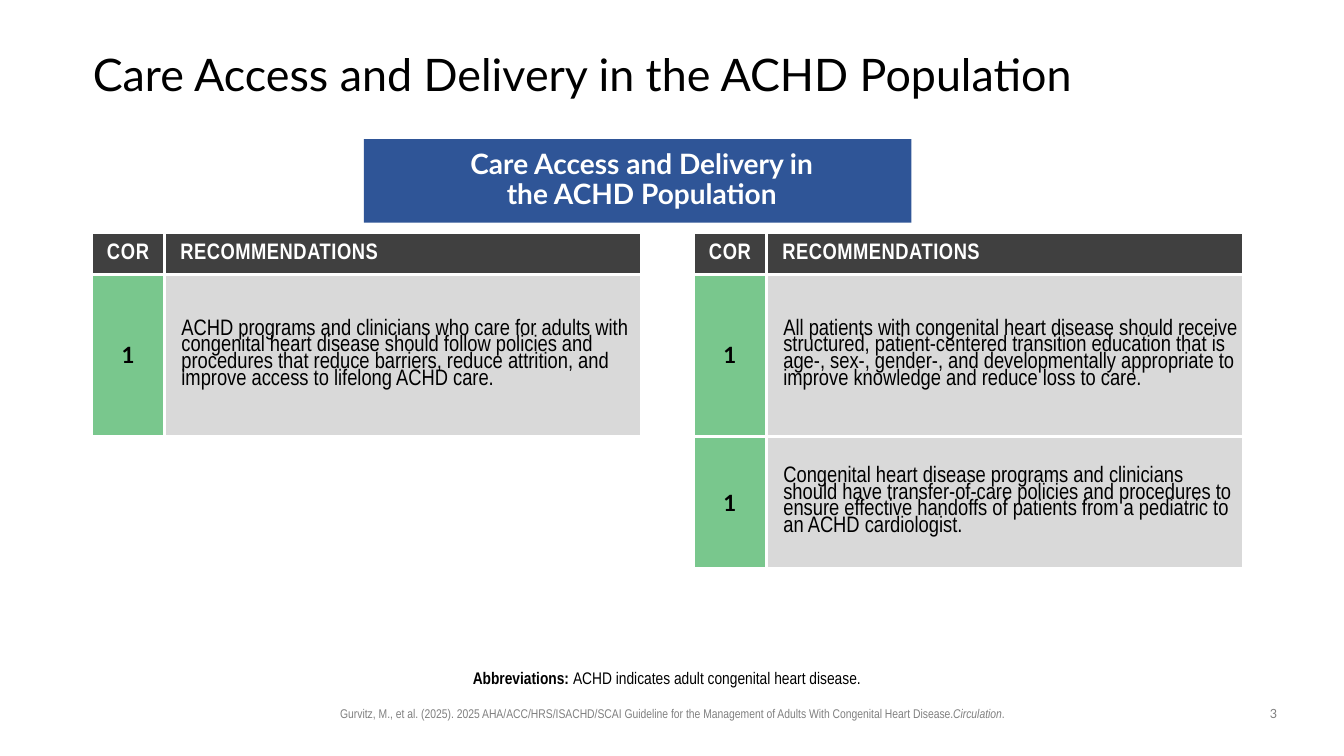
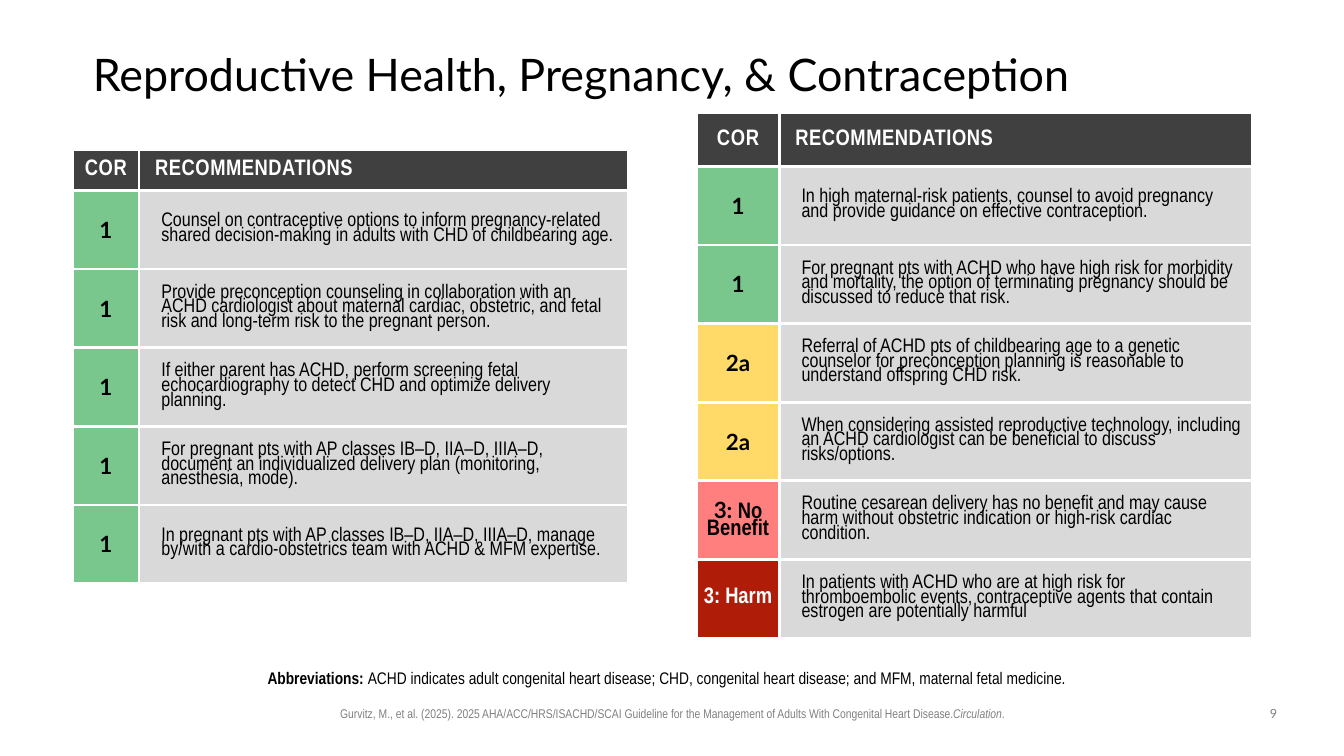
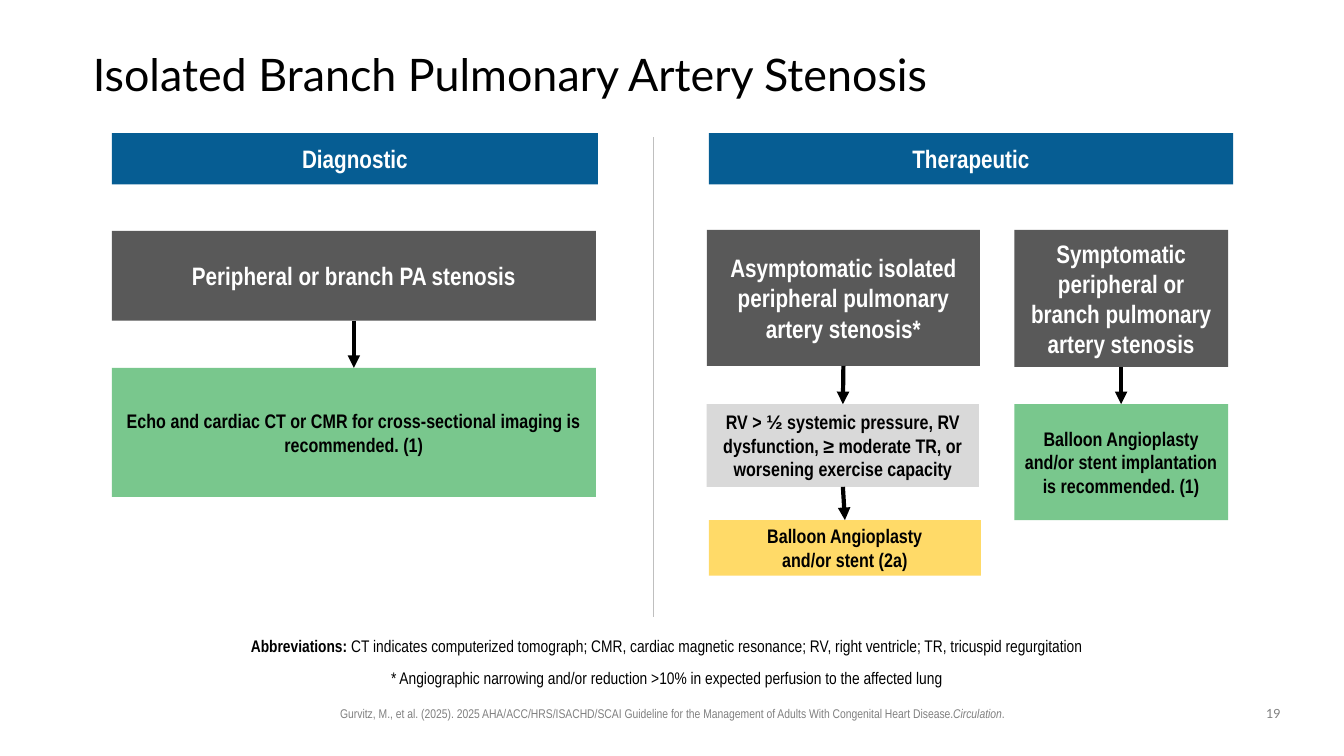
from pptx import Presentation
from pptx.dml.color import RGBColor
from pptx.enum.shapes import MSO_CONNECTOR, MSO_SHAPE
from pptx.enum.text import MSO_ANCHOR, PP_ALIGN
from pptx.oxml.ns import qn
from pptx.util import Inches, Pt
from lxml.etree import SubElement

WHITE, BLACK, GRAY = "FFFFFF", "000000", "808080"
NAVY, BLUE, SLATE, HEADER = "2F5597", "065D93", "595959", "404040"
GREEN, YELLOW, PINK, RED, SILVER = "79C78D", "FFDA68", "FF7F7F", "AF1C08", "D9D9D9"
NARROW = {"name": "Arial Narrow"}
LATO = {"name": "Lato"}
BOLD = {"bold": True}
TITLE = {**LATO, "size": Pt(32), "color": BLACK}
BANNER = {**LATO, **BOLD, "size": Pt(20), "color": WHITE}
HEADING = {**NARROW, **BOLD, "size": Pt(18), "color": WHITE}
ACTION = {**NARROW, **BOLD, "size": Pt(14), "color": BLACK}
FOOTNOTE = {**NARROW, "size": Pt(12), "color": BLACK}
FOOTER = {**NARROW, "size": Pt(9), "color": GRAY}
PAGE = {**FOOTER, **LATO}
COLUMN = {**NARROW, **BOLD, "size": Pt(16), "color": WHITE}
GRADE = {**LATO, **BOLD, "size": Pt(16), "color": BLACK}
ADVICE = {**NARROW, "size": Pt(16), "color": BLACK}
CENTER = {"alignment": PP_ALIGN.CENTER}
LEFT = {"alignment": PP_ALIGN.LEFT}
TIGHT = {"line_spacing": 0.79}
GRADE_FILLS = {"1": GREEN, "2a": YELLOW, "3: No Benefit": PINK, "3: Harm": RED}
GRADE_SPANS = {
    "3: No Benefit": ["3: ", ("No Benefit", NARROW)],
    "3: Harm": [("3: Harm", {**NARROW, "color": WHITE})],
}
CITATION = [
    "Gurvitz, M., et al. (2025). 2025 AHA/ACC/HRS/ISACHD/SCAI Guideline for the Management "
    "of Adults With Congenital Heart Disease.",
    ("Circulation", {"italic": True}),
    ".",
]


def rgb(value):
    return RGBColor.from_string(value)


def apply(target, values):
    for name, value in values.items():
        setattr(target, name, value)


def margins(left, top, right, bottom):
    names = ("margin_left", "margin_top", "margin_right", "margin_bottom")
    return dict(zip(names, map(Inches, (left, top, right, bottom))))


class Builder:
    def __init__(self):
        self.deck = Presentation()
        apply(self.deck, {"slide_width": Inches(13.33), "slide_height": Inches(7.5)})
        self.slide = None

    def add_slide(self, title, number, notes):
        self.slide = self.deck.slides.add_slide(self.deck.slide_layouts[1])
        heading, body = self.slide.placeholders
        self.place(heading, 0.92, 0.4, 11.5, 0.72)
        self.set_text(heading.text_frame, [[title]], TITLE, {**LEFT, "line_spacing": 0.9},
                      margins(0, 0, 0, 0))
        self.place(body, 1.88, 6.42, 9.57, 0.46)
        self.set_text(body.text_frame, notes, FOOTNOTE,
                      {**CENTER, "line_spacing": 0.9, "space_before": Pt(10)},
                      {**margins(0, 0.05, 0.1, 0.05), "vertical_anchor": MSO_ANCHOR.BOTTOM})
        for para in body.text_frame.paragraphs:
            self.indent(para, 0)
        self.text((2.36, 6.95, 8.62, 0.25), CITATION, FOOTER)
        self.text((12.42, 6.95, 0.42, 0.26), [number], PAGE)

    def place(self, shape, *area):
        apply(shape, dict(zip(("left", "top", "width", "height"), map(Inches, area))))

    def indent(self, para, inches):
        properties = para._p.get_or_add_pPr()
        properties.set("marL", str(Inches(inches)))
        properties.set("indent", "0")
        SubElement(properties, qn("a:buNone"))

    def set_text(self, frame, paragraphs, style, layout=CENTER, options=None):
        apply(frame, {"word_wrap": True, "vertical_anchor": MSO_ANCHOR.MIDDLE, **(options or {})})
        for index, spans in enumerate(paragraphs):
            para = frame.add_paragraph() if index else frame.paragraphs[0]
            self.set_para(para, spans, style, layout)
        frame.paragraphs[0].space_before = Pt(0)

    def set_para(self, para, spans, style, layout):
        apply(para, layout)
        for item in spans:
            text, changes = (item, {}) if isinstance(item, str) else item
            values = {**style, **changes}
            color = values.pop("color")
            for index, line in enumerate(text.split("\n")):
                if index:
                    para.add_line_break()
                span = para.add_run()
                span.text = line
                apply(span.font, values)
                span.font.color.rgb = rgb(color)

    def text(self, area, spans, style, layout=CENTER, options=None):
        box = self.slide.shapes.add_textbox(*map(Inches, area))
        self.set_text(box.text_frame, [spans], style, layout,
                      options or {"vertical_anchor": MSO_ANCHOR.TOP})

    def box(self, area, fill, spans=(), style=HEADING):
        box = self.slide.shapes.add_shape(MSO_SHAPE.RECTANGLE, *map(Inches, area))
        box.shadow.inherit = False
        box.fill.solid()
        box.fill.fore_color.rgb = rgb(fill)
        box.line.fill.background()
        if spans:
            self.set_text(box.text_frame, [spans], style)
        return box

    def line(self, start, end, color, width):
        line = self.slide.shapes.add_connector(MSO_CONNECTOR.STRAIGHT, *map(Inches, start + end))
        line.line.color.rgb = rgb(color)
        line.line.width = Pt(width)
        SubElement(line._element.spPr, qn("a:effectLst"))
        return line

    def arrow(self, upper, lower):
        arrow = self.line((0, 0), (0, 0), BLACK, 3)
        arrow.begin_connect(upper, 2)
        arrow.end_connect(lower, 0)
        SubElement(arrow.line._get_or_add_ln(), qn("a:tailEnd"), type="triangle")

    def cell(self, cell, fill, spans, style, layout=CENTER, inset=0.1, indent=0, spacing=0):
        properties = cell._tc.get_or_add_tcPr()
        for side in ("lnL", "lnR", "lnT", "lnB"):
            border = SubElement(properties, qn(f"a:{side}"), w=str(Pt(2.25)))
            SubElement(SubElement(border, qn("a:solidFill")), qn("a:srgbClr"), val=WHITE)
        cell.fill.solid()
        cell.fill.fore_color.rgb = rgb(fill)
        apply(cell, {**margins(inset, 0.05, inset, 0.05), "vertical_anchor": MSO_ANCHOR.MIDDLE})
        para = cell.text_frame.paragraphs[0]
        self.indent(para, indent)
        self.set_para(para, spans, style, layout)
        for span in para.runs:
            span.font._element.set("spc", str(spacing))

    def recommendations(self, left, top, widths, heights, rows, size=16, inset=0.05):
        area = (left, top, sum(widths), sum(heights))
        table = self.slide.shapes.add_table(len(heights), 2, *map(Inches, area)).table
        apply(table, {"first_row": False, "horz_banding": False})
        for column, width in zip(table.columns, widths):
            column.width = Inches(width)
        for row, height in zip(table.rows, heights):
            row.height = Inches(height)
        self.cell(table.cell(0, 0), HEADER, ["COR"], COLUMN, spacing=50)
        self.cell(table.cell(0, 1), HEADER, ["RECOMMENDATIONS"], COLUMN, LEFT,
                  indent=0.06, spacing=40)
        for index, (grade, advice) in enumerate(rows, 1):
            layout = {**CENTER, **TIGHT} if grade in GRADE_SPANS else CENTER
            self.cell(table.cell(index, 0), GRADE_FILLS[grade],
                      GRADE_SPANS.get(grade, [grade]), GRADE, layout, inset=0.05)
            self.cell(table.cell(index, 1), SILVER, [advice], {**ADVICE, "size": Pt(size)},
                      {**LEFT, **TIGHT}, inset=inset, indent=0.12)


def abbreviations(text):
    return [("Abbreviations: ", BOLD), text]


def care_access(builder):
    title = "Care Access and Delivery in the ACHD Population"
    builder.add_slide(title, "3", [abbreviations("ACHD indicates adult congenital heart disease.")])
    builder.box((3.61, 1.38, 5.43, 0.83), NAVY)
    builder.text((4.52, 1.57, 3.69, 0.44), [title], BANNER, {**CENTER, "line_spacing": 0.9},
                 margins(0, 0, 0, 0))
    widths = (0.72, 4.73)
    builder.recommendations(0.91, 2.31, widths, (0.41, 1.61), [
        ("1", "ACHD programs and clinicians who care for adults with congenital heart disease should "
              "follow policies and procedures that reduce barriers, reduce attrition, and improve "
              "access to lifelong ACHD care."),
    ])
    builder.recommendations(6.88, 2.31, widths, (0.41, 1.61, 1.31), [
        ("1", "All patients with congenital heart disease should receive structured, patient-centered "
              "transition education that is age-, sex-, gender-, and developmentally appropriate to "
              "improve knowledge and reduce loss to care."),
        ("1", "Congenital heart disease programs and clinicians should have transfer-of-care policies "
              "and procedures to ensure effective handoffs of patients from a pediatric to an ACHD "
              "cardiologist."),
    ])


def reproductive_health(builder):
    builder.add_slide("Reproductive Health, Pregnancy, & Contraception", "9", [abbreviations(
        "ACHD indicates adult congenital heart disease; CHD, congenital heart disease; "
        "and MFM, maternal fetal medicine.")])
    builder.recommendations(0.72, 1.48, (0.66, 4.85), (0.41, *[0.78] * 5), [
        ("1", "Counsel on contraceptive options to inform pregnancy-related shared decision-making "
              "in adults with CHD of childbearing age."),
        ("1", "Provide preconception counseling in collaboration with an ACHD cardiologist about "
              "maternal cardiac, obstetric, and fetal risk and long-term risk to the pregnant person."),
        ("1", "If either parent has ACHD, perform screening fetal echocardiography to detect CHD "
              "and optimize delivery planning."),
        ("1", "For pregnant pts with AP classes IB–D, IIA–D, IIIA–D, document an individualized "
              "delivery plan (monitoring, anesthesia, mode)."),
        ("1", "In pregnant pts with AP classes IB–D, IIA–D, IIIA–D, manage by/with a "
              "cardio‑obstetrics team with ACHD & MFM expertise."),
    ], 14, 0.1)
    builder.recommendations(6.91, 1.12, (0.82, 4.69), (0.53, *[0.78] * 6), [
        ("1", "In high maternal‑risk patients, counsel to avoid pregnancy and provide guidance on "
              "effective contraception."),
        ("1", "For pregnant pts with ACHD who have high risk for morbidity and mortality, the option "
              "of terminating pregnancy should be discussed to reduce that risk."),
        ("2a", "Referral of ACHD pts of childbearing age to a genetic counselor for preconception "
               "planning is reasonable to understand offspring CHD risk."),
        ("2a", "When considering assisted reproductive technology, including an ACHD cardiologist "
               "can be beneficial to discuss risks/options."),
        ("3: No Benefit", "Routine cesarean delivery has no benefit and may cause harm without "
                          "obstetric indication or high‑risk cardiac condition."),
        ("3: Harm", "In patients with ACHD who are at high risk for thromboembolic events, "
                    "contraceptive agents that contain estrogen are potentially harmful"),
    ], 14, 0.1)


def branch_stenosis(builder):
    builder.add_slide("Isolated Branch Pulmonary Artery Stenosis", "19", [
        abbreviations("CT indicates computerized tomograph; CMR, cardiac magnetic resonance; "
                      "RV, right ventricle; TR, tricuspid regurgitation"),
        ["* Angiographic narrowing and/or reduction >10% in expected perfusion to the affected lung"],
    ])
    builder.box((1.11, 1.32, 4.82, 0.51), BLUE, ["Diagnostic"])
    builder.box((7.03, 1.32, 5.2, 0.51), BLUE, ["Therapeutic"])
    builder.line((6.48, 1.36), (6.48, 6.12), "BFBFBF", 0.5)
    finding = builder.box((1.11, 2.29, 4.8, 0.89), SLATE, ["Peripheral or branch PA stenosis"])
    imaging = builder.box((1.11, 3.65, 4.8, 1.28), GREEN, [
        "Echo and cardiac CT or CMR for cross-sectional imaging is recommended. (1)"], ACTION)
    asymptomatic = builder.box((7.01, 2.28, 2.71, 1.35), SLATE, [
        "Asymptomatic isolated peripheral pulmonary artery stenosis*"])
    criteria = builder.box((7.01, 4.01, 2.7, 0.82), SILVER, [
        "RV > ", ("½", {"name": "Arial"}),
        " systemic pressure, RV dysfunction, ≥ moderate TR, or worsening exercise capacity"], ACTION)
    stent = builder.box((7.03, 5.16, 2.7, 0.55), YELLOW, [
        "Balloon Angioplasty\nand/or stent (2a)"], ACTION)
    symptomatic = builder.box((10.06, 2.28, 2.12, 1.36), SLATE, [
        "Symptomatic peripheral or branch pulmonary artery stenosis"])
    implant = builder.box((10.06, 4.01, 2.12, 1.15), GREEN, [
        "Balloon Angioplasty and/or stent implantation is recommended. (1)"], ACTION)
    for upper, lower in ((finding, imaging), (asymptomatic, criteria), (criteria, stent),
                         (symptomatic, implant)):
        builder.arrow(upper, lower)


def main():
    builder = Builder()
    for build in (care_access, reproductive_health, branch_stenosis):
        build(builder)
    builder.deck.save("out.pptx")


if __name__ == "__main__":
    main()
